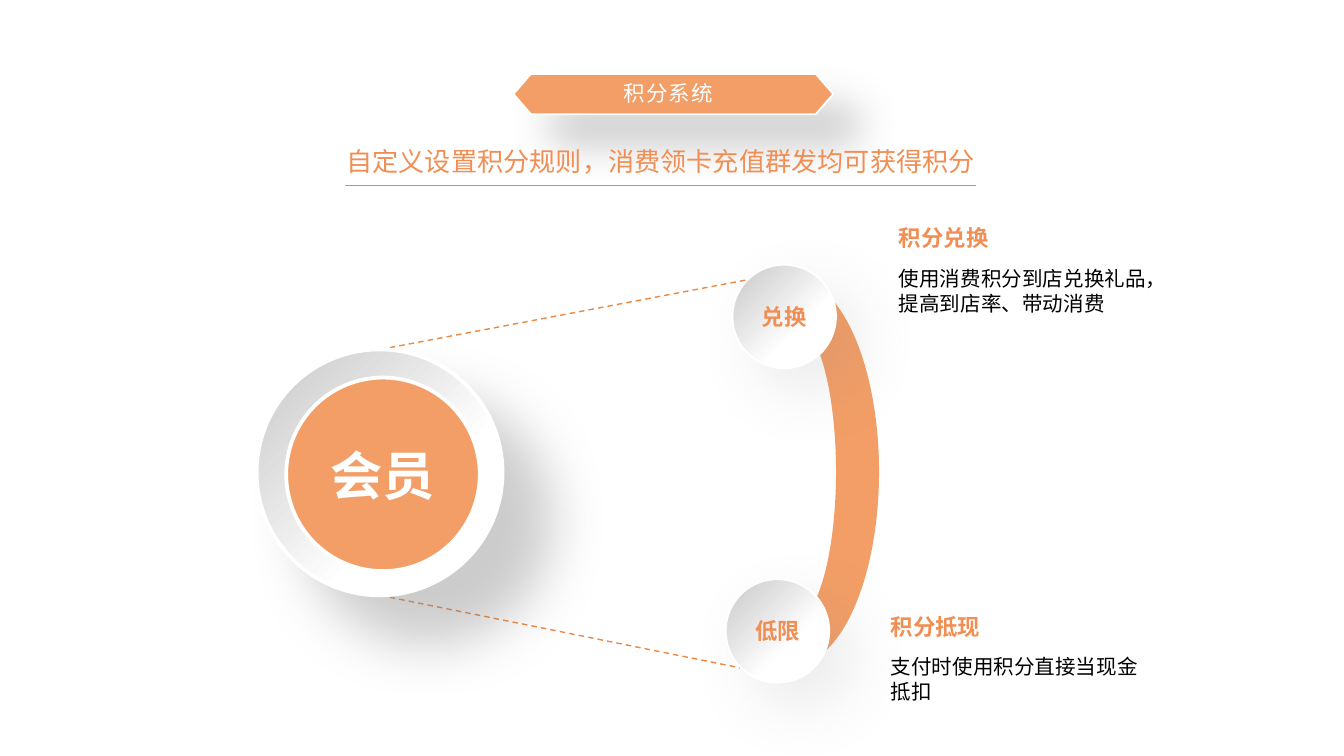
from lxml import etree
from pptx import Presentation
from pptx import util as u
from pptx.dml.color import RGBColor
from pptx.enum import dml, shapes, text
from pptx.oxml import ns

ORANGE, ACCENT, RULE, WHITE = "F39E66", "F18E53", "ED8741", "FFFFFF"
CJK = "Noto Sans CJK SC"


def color(value):
    return RGBColor.from_string(value)


def add_span(para, words, size, tint, bold=False, face="Karla", spacing=None):
    span = para.add_run()
    span.text = words
    span.font.size = u.Pt(size)
    span.font.bold = bold
    span.font.name = face
    span.font.color.rgb = color(tint)
    properties = span.font._element
    etree.SubElement(properties, ns.qn("a:ea"), typeface=CJK)
    if spacing:
        properties.set("spc", str(round(spacing * 100)))


def add_label(parent, left, top, width, height, words, size, tint, wrap=True, **style):
    box = parent.add_textbox(*map(u.Inches, (left, top, width, height)))
    frame = box.text_frame
    frame.word_wrap = wrap
    frame.auto_size = text.MSO_AUTO_SIZE.SHAPE_TO_FIT_TEXT
    add_span(frame.paragraphs[0], words, size, tint, **style)


def add_line(parent, start, end, width, dashed=False):
    line = parent.add_connector(
        shapes.MSO_CONNECTOR.STRAIGHT, *map(u.Inches, (*start, *end)))
    line.line.color.rgb = color(RULE)
    line.line.width = u.Pt(width)
    if dashed:
        line.line.dash_style = dml.MSO_LINE.DASH
    etree.SubElement(line._element.spPr, ns.qn("a:effectLst"))


def cast_shadow(shape, alpha, blur, distance):
    effects = shape._element.spPr.find(ns.qn("a:effectLst"))
    shadow = etree.SubElement(
        effects, ns.qn("a:outerShdw"), blurRad=str(u.Pt(blur)),
        dist=str(u.Pt(distance)), dir="2700000", algn="tl", rotWithShape="0")
    tint = etree.SubElement(shadow, ns.qn("a:srgbClr"), val="808080")
    etree.SubElement(tint, ns.qn("a:alpha"), val=str(alpha * 1000))


def paint(shape, outline=None):
    shape.shadow.inherit = False
    shape.fill.solid()
    shape.fill.fore_color.rgb = color(ORANGE)
    if outline:
        shape.line.color.rgb = color(WHITE)
        shape.line.width = u.Pt(outline)
    else:
        shape.line.fill.background()


def shade(shape):
    shape.fill.gradient()
    shape.fill.gradient_angle = 135
    for stop, position, tint in zip(shape.fill.gradient_stops, (0.36, 1), (WHITE, "C7C7C7")):
        stop.position = position
        stop.color.rgb = color(tint)


def add_disc(page, left, top, size, outline):
    disc = page.shapes.add_shape(
        shapes.MSO_SHAPE.OVAL, *map(u.Inches, (left, top, size, size)))
    paint(disc, outline)
    return disc


def caption_disc(disc, words, size, tint):
    frame = disc.text_frame
    frame.margin_left = frame.margin_right = u.Inches(0.07)
    frame.margin_top = frame.margin_bottom = u.Inches(0.04)
    frame.vertical_anchor = text.MSO_ANCHOR.MIDDLE
    frame.paragraphs[0].alignment = text.PP_ALIGN.CENTER
    add_span(frame.paragraphs[0], words, size, tint, bold=True)


def add_banner(page, left, top, width, height):
    tip = 0.13
    right, bottom, middle = left + width, top + height, top + height / 2
    corners = [(right - tip, top), (right, middle), (right - tip, bottom),
               (left + tip, bottom), (left, middle)]
    builder = page.shapes.build_freeform(u.Inches(left + tip), u.Inches(top))
    builder.add_line_segments([(u.Inches(x), u.Inches(y)) for x, y in corners])
    banner = builder.convert_to_shape()
    paint(banner, 1)
    cast_shadow(banner, 38, 22, 23)
    add_label(page.shapes, left + 0.72, top, 0.93, 0.3, "积分系统", 11.5, WHITE,
              face=CJK, spacing=0.7)


def add_headline(page, left, top, width, height):
    group = page.shapes.add_group_shape()
    add_label(group.shapes, left, top, width, height,
              "自定义设置积分规则，消费领卡充值群发均可获得积分", 14, ACCENT)
    rule = top + height + 0.01
    add_line(group.shapes, (left + 0.09, rule), (left + 4.78, rule), 1)


def add_arc(page, left, top, width, height):
    arc = page.shapes.add_shape(
        shapes.MSO_SHAPE.BLOCK_ARC, *map(u.Inches, (left, top, width, height)))
    arc.rotation = 90
    paint(arc)


def add_hub(page, left, top, size):
    ring = add_disc(page, left, top, size, 2)
    shade(ring)
    cast_shadow(ring, 40, 30, 36)
    core = add_disc(page, left + 0.22, top + 0.21, 1.44, 2)
    caption_disc(core, "会员", 28, WHITE)


def add_node(page, left, top, size, words):
    node = add_disc(page, left, top, size, 1)
    shade(node)
    cast_shadow(node, 14, 33, 18)
    caption_disc(node, words, 12, ACCENT)


def add_callout(page, left, top, width, heading, detail):
    add_label(page.shapes, left, top, 0.88, 0.3, heading, 12, ACCENT, wrap=False, bold=True)
    add_label(page.shapes, left, top + 0.31, width, 0.47, detail, 11, "000000")


def main():
    deck = Presentation()
    deck.slide_width, deck.slide_height = u.Inches(10), u.Inches(10 * 9 / 16)
    page = deck.slides.add_slide(deck.slide_layouts[6])
    add_line(page.shapes, (2.83, 4.43), (5.51, 4.97), 0.75, dashed=True)
    add_arc(page, 4.46, 2.87, 2.88, 1.28)
    add_line(page.shapes, (2.83, 2.6), (5.57, 2.08), 0.75, dashed=True)
    add_hub(page, 1.91, 2.6, 1.83)
    add_node(page, 5.45, 1.97, 0.77, "兑换")
    add_banner(page, 3.82, 0.55, 2.38, 0.3)
    add_node(page, 5.4, 4.31, 0.77, "低限")
    add_callout(page, 6.59, 1.62, 2.17, "积分兑换",
                "使用消费积分到店兑换礼品，提高到店率、带动消费")
    add_callout(page, 6.53, 4.51, 2.17, "积分抵现", "支付时使用积分直接当现金抵扣")
    add_headline(page, 2.48, 1.03, 5.03, 0.34)
    deck.save("out.pptx")


if __name__ == "__main__":
    main()
